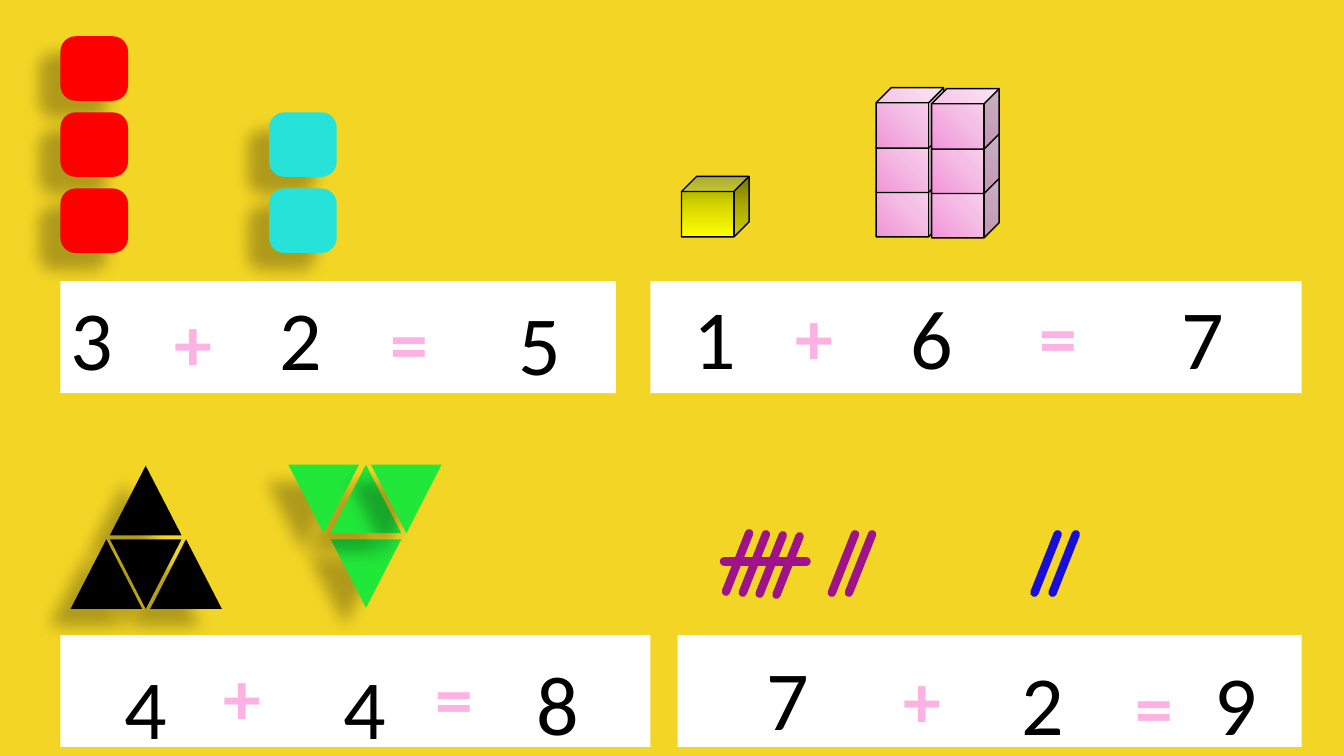
from dataclasses import dataclass

from lxml import etree
from pptx import Presentation
from pptx.dml.color import RGBColor
from pptx.enum.shapes import MSO_CONNECTOR, MSO_SHAPE
from pptx.enum.text import MSO_AUTO_SIZE
from pptx.oxml import parse_xml
from pptx.oxml.ns import nsdecls, qn
from pptx.shapes.autoshape import Shape
from pptx.slide import Slide
from pptx.util import Emu, Inches, Pt

RECTANGLE = MSO_SHAPE.RECTANGLE
ROUNDED = MSO_SHAPE.ROUNDED_RECTANGLE
TRIANGLE = MSO_SHAPE.ISOSCELES_TRIANGLE
CUBE = MSO_SHAPE.CUBE
STRAIGHT = MSO_CONNECTOR.STRAIGHT
FIT_TEXT = MSO_AUTO_SIZE.SHAPE_TO_FIT_TEXT

CELL = Inches(0.1)  # one column wide, one row high


@dataclass(frozen=True)
class Theme:
    background: str = "F3D625"
    panel: str = "FFFFFF"
    ink: str = "000000"
    operator: str = "FCB2E2"
    red: str = "FF0000"
    cyan: str = "26E2D9"
    green: str = "21E739"
    purple: str = "9E128A"
    blue: str = "180ED8"
    pink_shades: tuple[str, ...] = ("F294D8", "F5BEE5", "F9E0F1")
    yellow_shades: tuple[str, ...] = ("979700", "D7D700", "FFFF00")
    font: str = "Calibri"
    digit_size: float = 60
    operator_size: float = 54
    outline: float = 1
    stroke: float = 6


@dataclass(frozen=True)
class Box:
    """A rectangle measured in grid columns and rows."""
    column: float
    row: float
    columns: float
    rows: float

    def emu(self) -> tuple[Emu, ...]:
        return tuple(cells(n) for n in (self.column, self.row, self.columns, self.rows))


@dataclass(frozen=True)
class Glyph:
    text: str
    column: float
    row: float
    columns: float


@dataclass(frozen=True)
class Sum:
    panel: Box
    glyphs: tuple[Glyph, ...]


@dataclass(frozen=True)
class Tile:
    column: float
    row: float
    flipped: bool = False


@dataclass(frozen=True)
class Stroke:
    column: float
    row: float
    to_column: float
    to_row: float
    color: str


THEME = Theme()

SUMS = (
    Sum(Box(6, 27.9, 55.1, 11.1), (
        Glyph("3", 6, 27.9, 5.8), Glyph("+", 16.3, 28.9, 3.6), Glyph("2", 26.7, 27.9, 5.8),
        Glyph("=", 37.8, 28.9, 3.6), Glyph("5", 50.4, 28.4, 5.8))),
    Sum(Box(64.5, 27.9, 64.6, 11.1), (
        Glyph("1", 67.8, 27.8, 5.7), Glyph("+", 77.9, 28.3, 6.9), Glyph("6", 89.3, 27.8, 5.7),
        Glyph("=", 102.1, 28.3, 6.9), Glyph("7", 116.2, 27.8, 5.7))),
    Sum(Box(6, 63, 58.5, 11.1), (
        Glyph("4", 11.4, 64.5, 6.3), Glyph("+", 21.2, 64, 8.5), Glyph("4", 33.1, 64.5, 6.3),
        Glyph("=", 42.2, 64.1, 2.2), Glyph("8", 52.2, 64.1, 4.5))),
    Sum(Box(67.2, 63, 61.9, 11.1), (
        Glyph("7", 75, 63.6, 6.3), Glyph("+", 88.6, 64.3, 7.1), Glyph("2", 100.3, 64.1, 6.3),
        Glyph("=", 111.6, 65, 3), Glyph("9", 119.5, 64.1, 6.8))),
)

SQUARE_TOP, SQUARE_PITCH = 3.6, 7.55
CUBE_BASE, CUBE_PITCH = 17.5, 4.4

BLACK_TRIANGLES = (Tile(7, 53.5), Tile(10.9, 53.5, True), Tile(14.9, 53.5), Tile(10.9, 46.2))
GREEN_TRIANGLES = (Tile(32.8, 53.5, True), Tile(32.8, 46.1),
                   Tile(28.6, 46.1, True), Tile(36.8, 46.1, True))


def cells(count: float) -> Emu:
    return Emu(round(count * CELL))


def rgb(color: str) -> RGBColor:
    return RGBColor.from_string(color)


def add_block(slide: Slide, kind: MSO_SHAPE, box: Box, color: str) -> Shape:
    block = slide.shapes.add_shape(kind, *box.emu())
    block.shadow.inherit = False
    block.fill.solid()
    block.fill.fore_color.rgb = rgb(color)
    block.line.fill.background()
    return block


def cast_shadow(block: Shape) -> None:
    """Give the block a soft shadow down to the left."""
    effects = block._element.spPr.find(qn("a:effectLst"))
    effects.append(parse_xml(
        f'<a:outerShdw {nsdecls("a")} blurRad="{Pt(11.8)}" dist="{Pt(19.7)}" '
        f'dir="{141 * 60000}" algn="ctr" rotWithShape="0">'
        f'<a:srgbClr val="{THEME.ink}"><a:alpha val="28000"/></a:srgbClr></a:outerShdw>'))


def add_square(slide: Slide, column: float, level: int, color: str) -> None:
    box = Box(column, SQUARE_TOP + level * SQUARE_PITCH, 6.7, 6.4)
    square = add_block(slide, ROUNDED, box, color)
    square.adjustments[0] = 0.236
    cast_shadow(square)


def add_triangles(slide: Slide, tiles: tuple[Tile, ...], columns: float, rows: float,
                  color: str) -> None:
    for tile in tiles:
        triangle = add_block(slide, TRIANGLE, Box(tile.column, tile.row, columns, rows), color)
        triangle.rotation = 180 if tile.flipped else 0
        cast_shadow(triangle)


def add_cube(slide: Slide, column: float, row: float, shades: tuple[str, ...],
             angle: int) -> None:
    cube = add_block(slide, CUBE, Box(column, row, 6.7, 6), shades[0])
    stops = "".join(f'<a:gs pos="{place * 50000}"><a:srgbClr val="{shade}"/></a:gs>'
                    for place, shade in enumerate(shades))
    properties = cube._element.spPr
    properties.replace(properties.find(qn("a:solidFill")), parse_xml(
        f'<a:gradFill {nsdecls("a")}><a:gsLst>{stops}</a:gsLst>'
        f'<a:lin ang="{angle * 60000}" scaled="0"/></a:gradFill>'))
    cube.line.color.rgb = rgb(THEME.ink)
    cube.line.width = Pt(THEME.outline)


def add_stroke(slide: Slide, stroke: Stroke) -> None:
    ends = (stroke.column, stroke.row, stroke.to_column, stroke.to_row)
    line = slide.shapes.add_connector(STRAIGHT, *map(cells, ends))
    line.line.color.rgb = rgb(stroke.color)
    line.line.width = Pt(THEME.stroke)
    properties = line._element.spPr
    properties.find(qn("a:ln")).set("cap", "rnd")
    etree.SubElement(properties, qn("a:effectLst"))


def add_glyph(slide: Slide, glyph: Glyph) -> None:
    is_operator = glyph.text in "+="
    box = Box(glyph.column, glyph.row, glyph.columns, 10.1 if is_operator else 11.1)
    frame = slide.shapes.add_textbox(*box.emu()).text_frame
    frame.word_wrap = True
    frame.auto_size = FIT_TEXT
    frame.text = glyph.text
    span = frame.paragraphs[0].runs[0]
    span.font.name = THEME.font
    span.font.size = Pt(THEME.operator_size if is_operator else THEME.digit_size)
    span.font.color.rgb = rgb(THEME.operator if is_operator else THEME.ink)
    if is_operator:
        span.font.bold = True
        properties = span._r.get_or_add_rPr()
        properties.set("spc", "50")
        properties.insert(0, parse_xml(
            f'<a:ln {nsdecls("a")} w="{Pt(0.75)}"><a:solidFill>'
            f'<a:srgbClr val="{THEME.ink}"/></a:solidFill></a:ln>'))


def slanted(column: float, color: str, row: float = 53) -> Stroke:
    return Stroke(column, row, column - 2.3, row + 5.8, color)


def main() -> None:
    deck = Presentation()
    deck.slide_width, deck.slide_height = Inches(13.33), Inches(7.5)
    page = deck.slides.add_slide(deck.slide_layouts[6])
    page.background.fill.solid()
    page.background.fill.fore_color.rgb = rgb(THEME.background)

    for equation in SUMS:
        add_block(page, RECTANGLE, equation.panel, THEME.panel)
    for level in range(3):
        add_square(page, 6, level, THEME.red)
    for level in range(1, 3):
        add_square(page, 26.7, level, THEME.cyan)

    add_cube(page, 67.6, CUBE_BASE, THEME.yellow_shades, 90)
    for level in range(3):
        for column, drop in ((86.9, 0), (92.4, 0.1)):
            add_cube(page, column, CUBE_BASE + drop - level * CUBE_PITCH, THEME.pink_shades, 315)

    add_triangles(page, BLACK_TRIANGLES, 7.1, 6.9, THEME.ink)
    add_triangles(page, GREEN_TRIANGLES, 7, 6.8, THEME.green)

    five = [slanted(74.3 + 1.67 * i, THEME.purple, 52.9 + 0.1 * i) for i in range(4)]
    five.append(Stroke(80, 55.7, 71.8, 55.7, THEME.purple))
    two = [slanted(column, THEME.purple) for column in (84.8, 86.5)]
    blue_two = [slanted(column, THEME.blue) for column in (106.7, 104.9)]
    for stroke in five + two + blue_two:
        add_stroke(page, stroke)

    for equation in SUMS:
        for glyph in equation.glyphs:
            add_glyph(page, glyph)
    deck.save("out.pptx")


if __name__ == "__main__":
    main()
